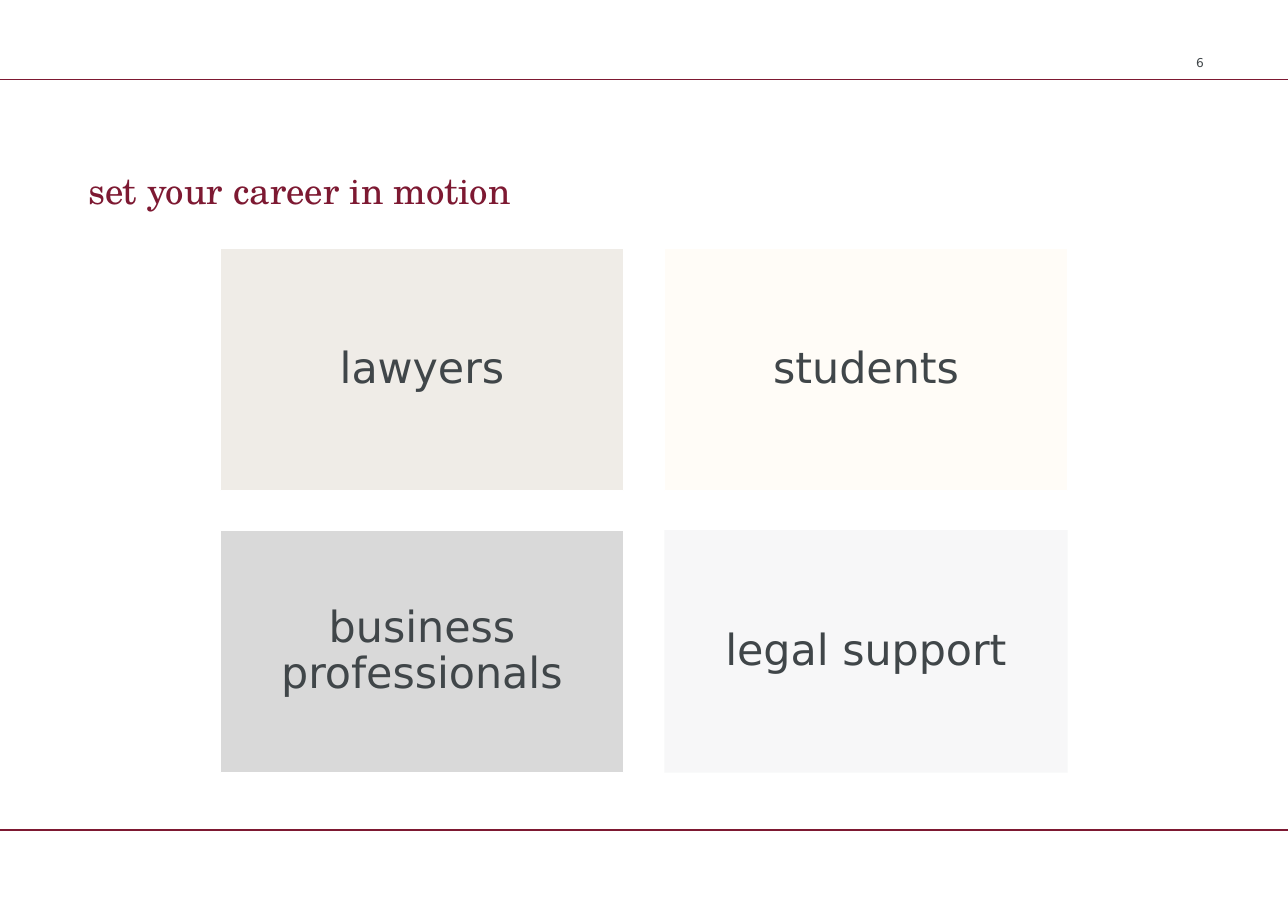
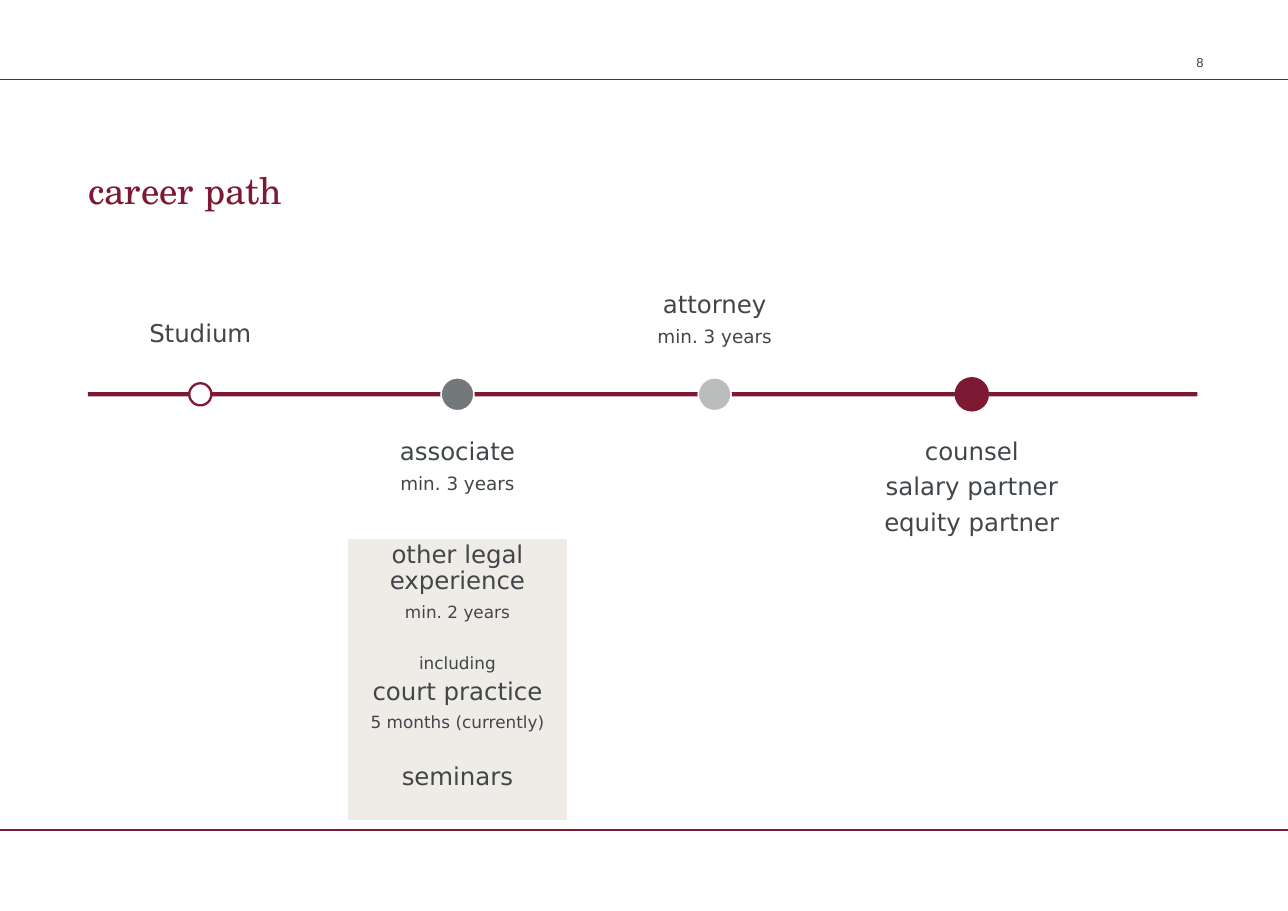
"""Build two career slides: the audience cards and the career path timeline."""
from lxml import etree
from pptx import Presentation, util as u
from pptx.dml import color
from pptx.enum import shapes, text
from pptx.oxml import ns

Cm, Pt = u.Cm, u.Pt
COLOURS = {
    "wine": "7D1932", "ink": "404649", "white": "FFFFFF", "sand": "EFECE7",
    "cream": "FFFCF7", "silver": "D9D9D9", "mist": "D7DBDC",
    "slate": "73787B", "ash": "BBBCBC",
}
WIDTH, HEIGHT = 29.7, 21
BODY_FONT, TITLE_FONT = "DejaVu Sans", "TeX Gyre Schola"
TOP, MIDDLE, BOTTOM = (text.MSO_ANCHOR.TOP, text.MSO_ANCHOR.MIDDLE,
                       text.MSO_ANCHOR.BOTTOM)
LEFT, CENTER, RIGHT = (text.PP_ALIGN.LEFT, text.PP_ALIGN.CENTER,
                       text.PP_ALIGN.RIGHT)
RECTANGLE, OVAL = shapes.MSO_SHAPE.RECTANGLE, shapes.MSO_SHAPE.OVAL
PADDING = 0.3


def rgb(name):
    return color.RGBColor.from_string(COLOURS[name])


def apply(target, formats):
    for attribute, value in formats.items():
        setattr(target, attribute, value)


class Deck:
    def __init__(self):
        self.show = Presentation()
        apply(self.show, {"slide_width": Cm(WIDTH), "slide_height": Cm(HEIGHT)})
        self.slide = None

    def new_slide(self, heading, number):
        self.slide = self.show.slides.add_slide(self.show.slide_layouts[5])
        for height in (19.13, 1.83):
            self.rule(height)
        self.label([(str(number), 8)], (26.64, 1.32, 1.12, 0.33),
                   align=RIGHT, padding=0)
        title = self.slide.shapes.title
        apply(title, {"left": Cm(2.03), "top": Cm(3.99),
                      "width": Cm(25.68), "height": Cm(1.32)})
        self.fill_text(title.text_frame, [(heading, 24)], align=LEFT, padding=0,
                       font=TITLE_FONT, ink="wine")

    def rule(self, height):
        line = self.slide.shapes.add_connector(
            shapes.MSO_CONNECTOR.STRAIGHT, 0, Cm(height), Cm(WIDTH), Cm(height))
        line.line.color.rgb = rgb("wine")
        line.line.width = Pt(1)
        etree.SubElement(line._element.spPr, ns.qn("a:effectLst"))

    def shape(self, kind, box, fill, outline=None, weight=1, opacity=None):
        shape = self.slide.shapes.add_shape(kind, *map(Cm, box))
        shape.shadow.inherit = False
        shape.fill.solid()
        shape.fill.fore_color.rgb = rgb(fill)
        if opacity:
            tint = shape._element.spPr.find(".//" + ns.qn("a:srgbClr"))
            etree.SubElement(tint, ns.qn("a:alpha"), val=str(opacity * 1000))
        if outline:
            shape.line.color.rgb = rgb(outline)
            shape.line.width = Pt(weight)
        else:
            shape.line.fill.background()
        return shape

    def panel(self, lines, box, fill, outline=None, opacity=None, **style):
        shape = self.shape(RECTANGLE, box, fill, outline, opacity=opacity)
        self.fill_text(shape.text_frame, lines, **style)

    def label(self, lines, box, **style):
        frame = self.slide.shapes.add_textbox(*map(Cm, box)).text_frame
        self.fill_text(frame, lines, **style)

    def dot(self, center, middle, size, fill, outline, weight):
        box = (center - size / 2, middle - size / 2, size, size)
        self.shape(OVAL, box, fill, outline, weight)

    def fill_text(self, frame, lines, anchor=TOP, align=CENTER, padding=PADDING,
                  top=None, font=BODY_FONT, ink="ink"):
        apply(frame, {
            "word_wrap": True, "auto_size": text.MSO_AUTO_SIZE.NONE,
            "vertical_anchor": anchor,
            "margin_left": Cm(padding), "margin_right": Cm(padding),
            "margin_top": Cm(padding if top is None else top),
            "margin_bottom": Cm(padding),
        })
        for index, (words, size, *gap) in enumerate(lines):
            paragraph = frame.add_paragraph() if index else frame.paragraphs[0]
            last = index == len(lines) - 1
            apply(paragraph, {
                "text": words, "alignment": align, "line_spacing": 0.9,
                "space_before": Pt(gap[0] if gap else 0),
                "space_after": Pt(0 if last else round(0.37 * size, 1)),
            })
            apply(paragraph.font, {"name": font, "size": Pt(size)})
            paragraph.font.color.rgb = rgb(ink)


def audience_slide(deck):
    deck.new_slide("set your career in motion", 6)
    audiences = [
        ("lawyers", "sand", "white", None),
        ("students", "cream", "white", None),
        ("business professionals", "silver", "white", None),
        ("legal support", "mist", None, 20),
    ]
    for index, (audience, fill, outline, opacity) in enumerate(audiences):
        row, column = divmod(index, 2)
        box = (5.08 + 10.24 * column, 5.72 + 6.5 * row, 9.3, 5.59)
        deck.panel([(audience, 28)], box, fill, outline, opacity, anchor=MIDDLE)


def path_slide(deck):
    deck.new_slide("career path", 8)
    experience = [
        ("other legal experience", 16), ("min. 2 years", 11),
        ("including", 11, 17), ("court practice", 16),
        ("5 months (currently)", 11), ("seminars", 16, 17),
    ]
    deck.panel(experience, (8.05, 12.45, 5, 6.43), "sand", "sand", top=0.05)

    middle, label_width = 9.09, 5.64
    deck.shape(RECTANGLE, (2.03, middle - 0.05, 25.58, 0.1), "wine")
    stages = [
        ([("Studium", 16)], 0.51, "white", "wine", 1.5),
        ([("associate", 16), ("min. 3 years", 12)], 0.76, "slate", "white", 1),
        ([("attorney", 16), ("min. 3 years", 12)], 0.76, "ash", "white", 1),
        ([("counsel", 16), ("salary partner", 16), ("equity partner", 16)],
         0.76, "wine", "wine", 1),
    ]
    for index, (lines, size, fill, outline, weight) in enumerate(stages):
        left = 1.8 + 5.93 * index
        below = index % 2
        deck.label(lines, (left, 9.83 if below else 5.31, label_width, 3),
                   anchor=TOP if below else BOTTOM)
        deck.dot(left + label_width / 2, middle, size, fill, outline, weight)


def main():
    deck = Deck()
    audience_slide(deck)
    path_slide(deck)
    deck.show.save("out.pptx")


if __name__ == "__main__":
    main()
